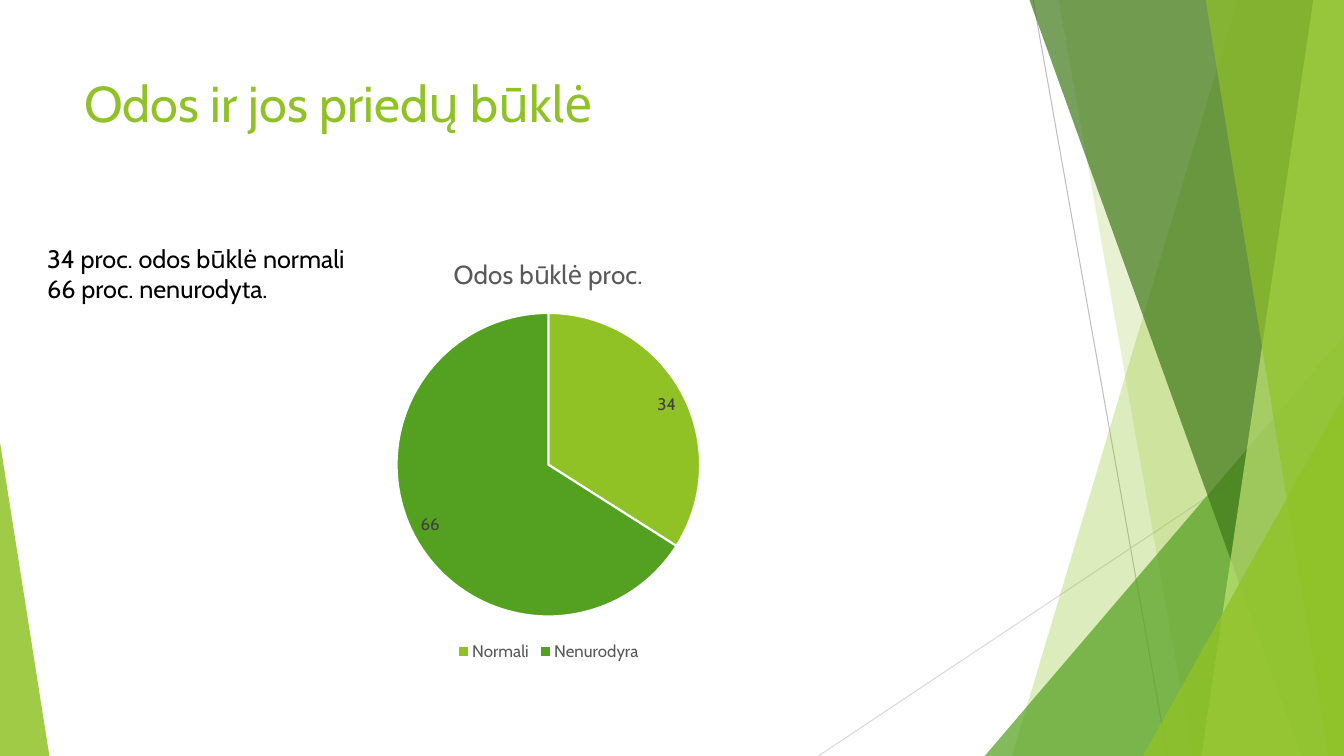
from dataclasses import dataclass

from lxml.etree import SubElement
from pptx import Presentation
from pptx.chart.data import CategoryChartData as ChartData
from pptx.dml.color import RGBColor as RGB
from pptx.enum.chart import XL_CHART_TYPE as Kind
from pptx.enum.chart import XL_LABEL_POSITION as Spot
from pptx.enum.chart import XL_LEGEND_POSITION as Side
from pptx.enum.shapes import MSO_CONNECTOR as Link
from pptx.enum.shapes import MSO_SHAPE as Shape
from pptx.oxml.ns import qn
from pptx.util import Pt

WIDTH, HEIGHT = 960, 540
BLEED = -0.7


@dataclass(frozen=True)
class Theme:
    font: str = "Cabin"
    lime: str = "90C226"
    green: str = "54A021"
    forest: str = "3F7819"
    pale: str = "C0E474"
    white: str = "FFFFFF"
    black: str = "000000"
    dark: str = "404040"
    gray: str = "595959"
    mid: str = "BFBFBF"
    light: str = "D9D9D9"
    title: float = 36
    body: float = 18
    head: float = 18.6
    small: float = 12


class Deck:
    def __init__(self, theme):
        self.theme = theme
        self.file = Presentation()
        self.file.slide_width = Pt(WIDTH)
        self.file.slide_height = Pt(HEIGHT)
        self.slide = self.file.slides.add_slide(self.file.slide_layouts[6])
        self.shapes = self.slide.shapes

    def style(self, font, size, color):
        font.name = self.theme.font
        font.size = Pt(size)
        font.bold = False
        font.color.rgb = RGB.from_string(color)

    def paint(self, shape, color, alpha):
        """Fill without outline or shadow; alpha is percent opaque."""
        shape.shadow.inherit = False
        shape.line.fill.background()
        shape.fill.solid()
        shape.fill.fore_color.rgb = RGB.from_string(color)
        tone = shape.fill._xPr.find(qn("a:solidFill"))[0]
        SubElement(tone, qn("a:alpha"), val=str(alpha * 1000))

    def line(self, start, end, color):
        line = self.shapes.add_connector(
            Link.STRAIGHT, *map(Pt, start), *map(Pt, end))
        line.line.color.rgb = RGB.from_string(color)
        line.line.width = Pt(0.75)
        SubElement(line._element.spPr, qn("a:effectLst"))

    def band(self, top, foot, color, alpha):
        """Slanted band from x = top to x = foot, out to the right edge."""
        pen = self.shapes.build_freeform(Pt(top), Pt(BLEED))
        pen.add_line_segments([
            (Pt(WIDTH), Pt(BLEED)), (Pt(WIDTH), Pt(HEIGHT)),
            (Pt(foot), Pt(HEIGHT))])
        self.paint(pen.convert_to_shape(), color, alpha)

    def wedge(self, left, top, right, tip, color, alpha):
        """Triangle on the bottom edge; tip is 0 for left, 1 for right."""
        shape = self.shapes.add_shape(
            Shape.ISOSCELES_TRIANGLE, Pt(left), Pt(top),
            Pt(right - left), Pt(HEIGHT - top))
        shape.adjustments[0] = tip
        self.paint(shape, color, alpha)

    def text(self, box, lines, size, color):
        frame = self.shapes.add_textbox(*map(Pt, box)).text_frame
        frame.word_wrap = True
        frame.text = "\n".join(lines)
        for item in frame.paragraphs:
            self.style(item.font, size, color)

    def pie(self, box, title, parts):
        """Draw parts, a list of (name, value, color)."""
        look = self.theme
        data = ChartData()
        data.categories = [name for name, _, _ in parts]
        data.add_series("Series 1", [value for _, value, _ in parts])
        chart = self.shapes.add_chart(Kind.PIE, *map(Pt, box), data).chart
        self.style(chart.font, look.small, look.gray)

        chart.has_title = True
        chart.chart_title.include_in_layout = False
        frame = chart.chart_title.text_frame
        frame.text = title
        self.style(frame.paragraphs[0].font, look.head, look.gray)

        chart.has_legend = True
        chart.legend.position = Side.BOTTOM
        chart.legend.include_in_layout = False
        self.style(chart.legend.font, look.small, look.gray)

        plot = chart.plots[0]
        plot.vary_by_categories = True
        plot.has_data_labels = True
        labels = plot.data_labels
        labels.show_value = True
        labels.show_percentage = False
        labels.position = Spot.INSIDE_END
        self.style(labels.font, look.small, look.dark)

        for index, (_, _, color) in enumerate(parts):
            form = plot.series[0].points[index].format
            form.fill.solid()
            form.fill.fore_color.rgb = RGB.from_string(color)
            form.line.color.rgb = RGB.from_string(look.white)
            form.line.width = Pt(1.5)


def main():
    look = Theme()
    deck = Deck(look)

    deck.line((738, 0), (834, HEIGHT), look.mid)
    deck.line((WIDTH, 290), (584.6, HEIGHT), look.light)
    deck.band(884.2, 722.9, look.lime, 30)
    deck.band(756, 851.8, look.lime, 20)
    deck.wedge(703.4, 239.8, WIDTH, 1, look.green, 72)
    deck.band(735.1, 929.5, look.forest, 70)
    deck.band(938.2, 858.2, look.pale, 70)
    deck.band(861.1, 949, look.lime, 65)
    deck.wedge(816.5, 283, WIDTH, 1, look.lime, 80)
    deck.wedge(0, 316.1, 35.3, 0, look.lime, 85)

    deck.text((53.3, 48, 676.8, 104), ["Odos ir jos priedų būklė"],
              look.title, look.lime)
    deck.pie((53.3, 170, 676.8, 305.5), "Odos būklė proc.",
             [("Normali", 34, look.lime), ("Nenurodyra", 66, look.green)])
    deck.text((26.6, 170, 240.5, 51),
              ["34 proc. odos būklė normali", "66 proc. nenurodyta."],
              look.body, look.black)
    deck.file.save("out.pptx")


if __name__ == "__main__":
    main()
